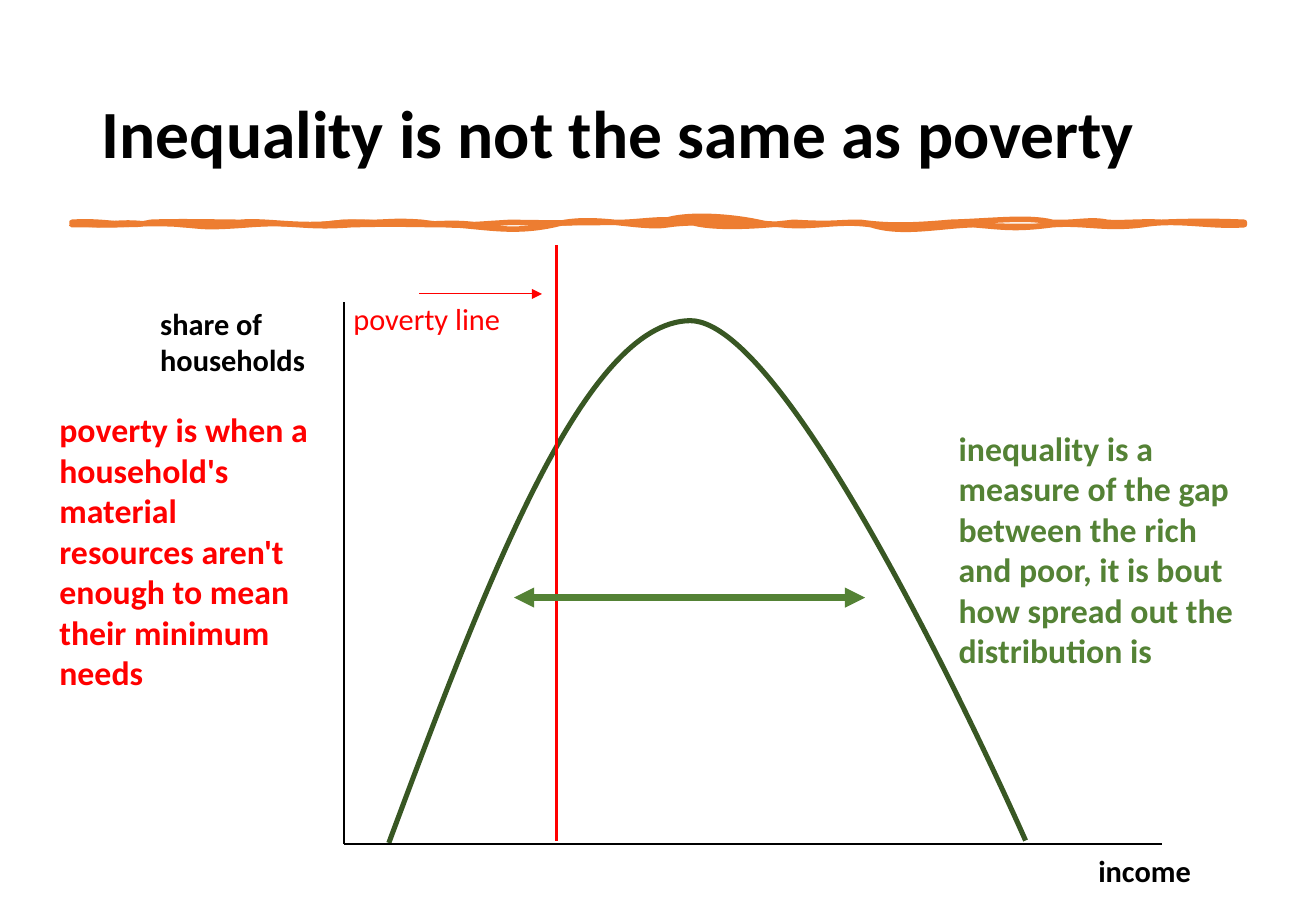
from pptx import Presentation
from pptx.dml.color import RGBColor
from pptx.enum.shapes import MSO_CONNECTOR as Connector
from pptx.enum.text import MSO_ANCHOR as Anchor, MSO_AUTO_SIZE as AutoSize
from pptx.oxml.ns import qn
from pptx.util import Inches, Pt
from lxml.etree import SubElement

FONT = "Calibri"
BLACK, RED, ORANGE = "000000", "FF0000", "ED7D31"
GREEN, DARK_GREEN = "548235", "385723"

# Text: words, (left, top, width, height), size, colour, bold, wrap
TITLE = ("Inequality is not the same as poverty", (0.74, 0.4, 9.34, 1.45), 40, BLACK, True, True)
LABELS = [
    ("income", (8.94, 6.97, 0.97, 0.4), 18, BLACK, True, False),
    ("share of households", (1.22, 2.46, 1.45, 0.71), 18, BLACK, True, True),
    ("poverty line", (2.81, 2.42, 1.42, 0.4), 18, RED, False, False),
    ("poverty is when a household's material resources aren't enough to mean "
     "their minimum needs", (0.39, 3.32, 2.28, 2.46), 20, RED, True, True),
    ("inequality is a measure of the gap between the rich and poor, it is bout "
     "how spread out the distribution is", (7.79, 3.47, 2.65, 2.12), 20, GREEN, True, True),
]

# Lines: start, end, colour, width, arrowheads
LINES = [
    ((2.83, 6.95), (9.56, 6.95), BLACK, 1, ()),
    ((2.83, 6.95), (2.83, 2.49), BLACK, 1, ()),
    ((3.45, 2.42), (4.46, 2.42), RED, 0.5, ("tailEnd",)),
    ((4.58, 2.02), (4.58, 6.92), RED, 2, ()),
    ((4.23, 4.92), (7.12, 4.92), GREEN, 4, ("headEnd", "tailEnd")),
]

# Curves: each row holds two control points and an end point
INCOME_START = (3.2, 6.94)
INCOME_CURVE = [(4, 4.79, 4.81, 2.65, 5.68, 2.64), (6.56, 2.64, 8.44, 6.92, 8.44, 6.92)]

RULE_START = (0.59, 1.83)
RULE_STROKE = [
    (0.89, 1.81, 1.03, 1.88, 1.24, 1.83), (1.48, 1.82, 1.82, 1.83, 1.98, 1.83),
    (2.2, 1.81, 2.48, 1.88, 2.82, 1.83), (3.22, 1.84, 3.18, 1.81, 3.47, 1.83),
    (3.76, 1.87, 3.85, 1.85, 4.21, 1.83), (4.53, 1.84, 5, 1.83, 5.14, 1.83),
    (5.35, 1.82, 5.46, 1.79, 5.69, 1.83), (5.85, 1.88, 6.2, 1.87, 6.53, 1.83),
    (6.87, 1.85, 6.87, 1.83, 7.08, 1.83), (7.3, 1.86, 7.48, 1.86, 7.82, 1.83),
    (8.17, 1.82, 8.46, 1.78, 8.66, 1.83), (8.85, 1.84, 8.97, 1.8, 9.11, 1.83),
    (9.23, 1.84, 9.39, 1.82, 9.56, 1.83), (9.78, 1.82, 10.04, 1.82, 10.24, 1.83),
    (10.24, 1.84, 10.24, 1.84, 10.24, 1.85), (9.94, 1.87, 9.7, 1.8, 9.4, 1.85),
    (9.09, 1.89, 8.93, 1.83, 8.66, 1.85), (8.35, 1.89, 8.26, 1.87, 8.01, 1.85),
    (7.72, 1.86, 7.42, 1.93, 7.17, 1.85), (6.9, 1.81, 6.69, 1.88, 6.43, 1.85),
    (6.2, 1.83, 5.68, 1.82, 5.5, 1.85), (5.27, 1.89, 4.89, 1.76, 4.56, 1.85),
    (4.23, 1.92, 4.02, 1.87, 3.73, 1.85), (3.41, 1.85, 3.28, 1.84, 2.89, 1.85),
    (2.48, 1.88, 2.44, 1.82, 2.05, 1.85), (1.66, 1.88, 1.67, 1.86, 1.5, 1.85),
    (1.35, 1.83, 1.02, 1.85, 0.59, 1.85), (0.6, 1.85, 0.6, 1.84, 0.59, 1.83),
]
RULE_FILL = [
    (0.77, 1.86, 0.98, 1.78, 1.24, 1.83), (1.5, 1.85, 1.57, 1.86, 1.69, 1.83),
    (1.79, 1.9, 2.36, 1.85, 2.63, 1.83), (2.98, 1.78, 3.09, 1.82, 3.27, 1.83),
    (3.49, 1.83, 3.74, 1.8, 3.92, 1.83), (4.12, 1.86, 4.54, 1.86, 4.85, 1.83),
    (5.15, 1.82, 5.27, 1.86, 5.4, 1.83), (5.54, 1.72, 6.05, 1.75, 6.34, 1.83),
    (6.69, 1.88, 6.94, 1.82, 7.27, 1.83), (7.65, 1.85, 7.66, 1.82, 8.01, 1.83),
    (8.39, 1.85, 8.51, 1.84, 8.95, 1.83), (9.41, 1.82, 9.32, 1.86, 9.59, 1.83),
    (9.86, 1.79, 10.06, 1.83, 10.24, 1.83), (10.24, 1.84, 10.24, 1.85, 10.24, 1.85),
    (9.87, 1.81, 9.75, 1.85, 9.5, 1.85), (9.25, 1.9, 9.09, 1.82, 8.76, 1.85),
    (8.49, 1.9, 8.29, 1.85, 7.82, 1.85), (7.36, 1.87, 7.29, 1.87, 7.08, 1.85),
    (6.86, 1.83, 6.72, 1.83, 6.63, 1.85), (6.52, 1.88, 6.34, 1.84, 6.08, 1.85),
    (5.83, 1.83, 5.35, 1.89, 5.14, 1.85), (4.99, 1.82, 4.62, 1.88, 4.4, 1.85),
    (4.15, 1.85, 4.11, 1.84, 3.85, 1.85), (3.63, 1.85, 3.24, 1.83, 3.11, 1.85),
    (2.95, 1.87, 2.84, 1.87, 2.66, 1.85), (2.48, 1.85, 2.38, 1.88, 2.2, 1.85),
    (2.02, 1.85, 1.82, 1.85, 1.46, 1.85), (1.08, 1.86, 0.85, 1.9, 0.59, 1.85),
    (0.59, 1.85, 0.59, 1.84, 0.59, 1.83),
]


def paint(target, colour):
    target.solid()
    target.fore_color.rgb = RGBColor.from_string(colour)


def add_label(page, words, place, size, colour, bold, wrap):
    box = page.shapes.add_textbox(*map(Inches, place))
    box.text_frame.word_wrap = wrap
    para = box.text_frame.paragraphs[0]
    span = para.add_run()
    span.text = words
    span.font.name, span.font.size, span.font.bold = FONT, Pt(size), bold
    paint(span.font.fill, colour)
    return box.text_frame


def add_line(page, start, end, colour, width, arrowheads):
    line = page.shapes.add_connector(Connector.STRAIGHT, *map(Inches, start + end))
    paint(line.line.fill, colour)
    line.line.width = Pt(width)
    for name in arrowheads:
        SubElement(line.line._get_or_add_ln(), qn("a:" + name), type="triangle")
    SubElement(line._element.spPr, qn("a:effectLst"))


def add_curve(page, start, outlines, closed, colour, width, filled):
    """Draw cubic outlines, each given as (rows, drawing flags), in one freeform."""
    builder = page.shapes.build_freeform(*map(Inches, start))
    ends = [tuple(map(Inches, row[4:])) for row in outlines[0][0]]
    builder.add_line_segments(ends, close=closed)
    shape = builder.convert_to_shape()
    shape.shadow.inherit = False
    if filled:
        paint(shape.fill, colour)
    else:
        shape.fill.background()
    paint(shape.line.fill, colour)
    shape.line.width = Pt(width)
    SubElement(shape.line._get_or_add_ln(), qn("a:round"))

    # Turn the straight outline into cubic segments
    outline_list = next(shape._element.iter(qn("a:pathLst")))
    outline_list.clear()
    for rows, flags in outlines:
        outline = SubElement(outline_list, qn("a:path"), w=str(shape.width),
                             h=str(shape.height), **flags)
        for tag, row in [("a:moveTo", start)] + [("a:cubicBezTo", row) for row in rows]:
            segment = SubElement(outline, qn(tag))
            for x, y in zip(row[::2], row[1::2]):
                SubElement(segment, qn("a:pt"), x=str(Inches(x) - shape.left),
                           y=str(Inches(y) - shape.top))
        if closed:
            SubElement(outline, qn("a:close"))


deck = Presentation()
deck.slide_width, deck.slide_height = Inches(10.83), Inches(7.5)
page = deck.slides.add_slide(deck.slide_layouts[6])

# Title
title = add_label(page, *TITLE)
title.vertical_anchor = Anchor.MIDDLE
title.paragraphs[0].line_spacing = 0.9
title.paragraphs[0].space_after = Pt(6)

# Hand-drawn rule under the title
rule_outlines = [(RULE_STROKE, {"fill": "none"}), (RULE_FILL, {"stroke": "0"})]
add_curve(page, RULE_START, rule_outlines, True, ORANGE, 3.25, True)

# Income distribution, axes and arrows
add_curve(page, INCOME_START, [(INCOME_CURVE, {"fill": "none"})], False, DARK_GREEN, 3, False)
for line in LINES:
    add_line(page, *line)

# Labels and explanations
for label in LABELS:
    add_label(page, *label).auto_size = AutoSize.SHAPE_TO_FIT_TEXT

deck.save("out.pptx")
